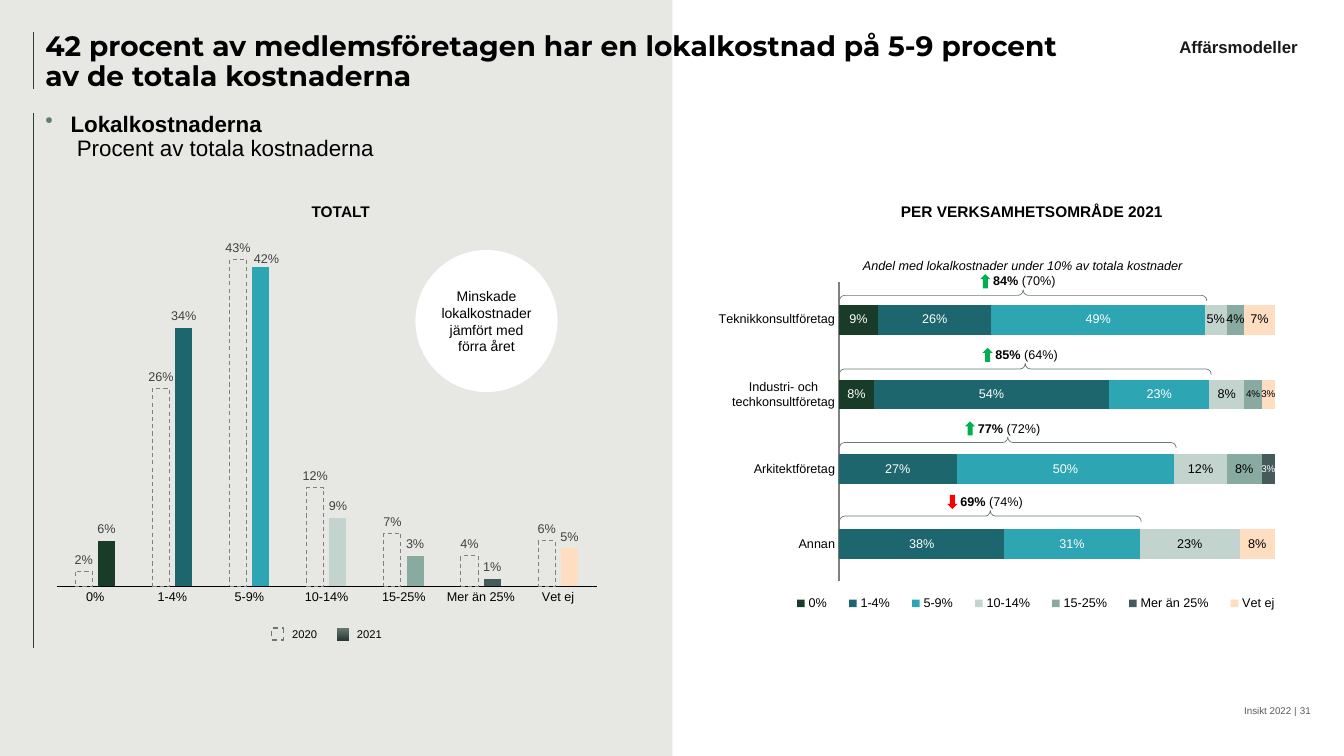
from dataclasses import dataclass

from lxml import etree
from pptx import Presentation
from pptx.chart.data import CategoryChartData
from pptx.dml.color import RGBColor
from pptx.enum.chart import XL_CHART_TYPE, XL_LABEL_POSITION, XL_LEGEND_POSITION, XL_TICK_LABEL_POSITION, XL_TICK_MARK
from pptx.enum.dml import MSO_LINE
from pptx.enum.shapes import MSO_CONNECTOR, MSO_SHAPE
from pptx.enum.text import MSO_ANCHOR, PP_ALIGN
from pptx.oxml import parse_xml
from pptx.oxml.ns import nsdecls, qn
from pptx.util import Inches, Pt

COLUMN, STACK = XL_CHART_TYPE.COLUMN_CLUSTERED, XL_CHART_TYPE.BAR_STACKED
ABOVE, MIDST = XL_LABEL_POSITION.OUTSIDE_END, XL_LABEL_POSITION.CENTER
BASE, NO_TICK, NEAR = XL_LEGEND_POSITION.BOTTOM, XL_TICK_MARK.NONE, XL_TICK_LABEL_POSITION.NEXT_TO_AXIS
DASH, STRAIGHT = MSO_LINE.DASH, MSO_CONNECTOR.STRAIGHT
RECT, OVAL, BRACE, ARROW = MSO_SHAPE.RECTANGLE, MSO_SHAPE.OVAL, MSO_SHAPE.RIGHT_BRACE, MSO_SHAPE.DOWN_ARROW
TOP, MIDDLE, BOTTOM = MSO_ANCHOR.TOP, MSO_ANCHOR.MIDDLE, MSO_ANCHOR.BOTTOM
LEFT, CENTER, RIGHT = PP_ALIGN.LEFT, PP_ALIGN.CENTER, PP_ALIGN.RIGHT


@dataclass(frozen=True)
class Theme:
    """Colours, fonts and type sizes of the slide."""
    back: str = "E7E8E4"
    white: str = "FFFFFF"
    black: str = "000000"
    rule: str = "323E39"
    sage: str = "657B71"
    pine: str = "2A3B36"
    grey: str = "808080"
    dim: str = "404040"
    foot: str = "595959"
    tag: str = "191919"
    rise: str = "00B050"
    fall: str = "FF0000"
    scale: tuple = ("193C29", "1D666E", "2EA5B3", "C3D4CF", "88AAA0", "455A5A", "FEDDC1")
    font: str = "Arial"
    head: str = "Montserrat"
    title: int = 20
    lead: int = 16
    chip: int = 12
    cap: int = 11
    body: int = 10
    small: int = 9
    key: int = 8
    tiny: int = 7


T = Theme()
SPANS = ("0%", "1-4%", "5-9%", "10-14%", "15-25%", "Mer än 25%", "Vet ej")
FIELDS = ("Teknikkonsultföretag", "Industri- och\ntechkonsultföretag", "Arkitektföretag", "Annan")
YEARS = (("Series 1", (0.02, 0.26, 0.43, 0.13, 0.07, 0.04, 0.06)),
         ("Series 2", (0.06, 0.34, 0.42, 0.09, 0.04, 0.01, 0.05)))
SHARES = ((0.09, 0.08, 0, 0), (0.26, 0.54, 0.27, 0.38), (0.49, 0.23, 0.5, 0.31), (0.05, 0.08, 0.12, 0.23),
          (0.04, 0.04, 0.08, 0), (0, 0, 0.04, 0), (0.07, 0.04, 0, 0.08))
TIGHT = {4: {1: "4%"}, 5: {2: "3%"}, 6: {1: "3%"}}
TRENDS = ((84, 70), (85, 64), (77, 72), (69, 74))
NOTE = "Andel med lokalkostnader under 10% av totala kostnader"


def rgb(code):
    """Turn a hex code into a colour."""
    return RGBColor.from_string(code)


def style(font, size, color=T.black, face=T.font):
    """Set the face, size and colour of a font."""
    font.name, font.size = face, Pt(size)
    font.color.rgb = rgb(color)


def write(frame, lines, size, color=T.black, face=T.font, align=LEFT, anchor=TOP, inset=(0.1, 0.05),
          wrap=True, space=1.0):
    """Fill a frame with lines, each a list of (text, marks) runs."""
    frame.word_wrap, frame.vertical_anchor = wrap, anchor
    frame.margin_left = frame.margin_right = Inches(inset[0])
    frame.margin_top = frame.margin_bottom = Inches(inset[1])
    for i, line in enumerate(lines):
        para = frame.add_paragraph() if i else frame.paragraphs[0]
        para.alignment, para.line_spacing = align, space
        for text, marks in line:
            run = para.add_run()
            run.text = text
            style(run.font, size, color, face)
            run.font.bold, run.font.italic = "b" in marks, "i" in marks


def label(slide, box, lines, size, **look):
    """Add a text box."""
    area = slide.shapes.add_textbox(*map(Inches, box))
    write(area.text_frame, lines, size, **look)
    return area


def shape(slide, kind, box, fill=None, line=None, width=0.5, turn=0):
    """Add a preset shape without a shadow."""
    item = slide.shapes.add_shape(kind, *map(Inches, box))
    item.shadow.inherit, item.rotation = False, turn
    for paint, color in ((item.fill, fill), (item.line.fill, line)):
        if color:
            paint.solid()
            paint.fore_color.rgb = rgb(color)
        else:
            paint.background()
    if line:
        item.line.width = Pt(width)
    return item


def rule(slide, top, end):
    """Add a thin upright line at the left margin."""
    line = slide.shapes.add_connector(STRAIGHT, Inches(0.33), Inches(top), Inches(0.33), Inches(end))
    line.line.color.rgb, line.line.width = rgb(T.rule), Pt(0.5)
    etree.SubElement(line._element.spPr, qn("a:effectLst"))


def bullet(area):
    """Give the first line a bullet and indent the rest to match."""
    for i, para in enumerate(area.text_frame.paragraphs):
        props = para._p.get_or_add_pPr()
        props.set("marL", str(Inches(0.25)))
        if not i:
            props.set("indent", str(Inches(-0.25)))
            props.append(parse_xml(f'<a:buClr {nsdecls("a")}><a:srgbClr val="{T.sage}"/></a:buClr>'))
            props.append(parse_xml(f'<a:buChar {nsdecls("a")} char="•"/>'))


def place(part, index, **spots):
    """Fix the layout of a chart part by hand."""
    for old in part.findall(qn("c:layout")):
        part.remove(old)
    tags = "".join(f'<c:{tag} val="{val}"/>' for tag, val in spots.items())
    part.insert(index, parse_xml(f'<c:layout {nsdecls("c")}><c:manualLayout>{tags}</c:manualLayout></c:layout>'))


def chart(slide, kind, box, names, rows, gap, lap, peak, edge, plot):
    """Add a chart with a hidden value axis and a fixed plot area."""
    data = CategoryChartData(number_format="0%")
    data.categories = names
    for name, vals in rows:
        data.add_series(name, vals)
    graph = slide.shapes.add_chart(kind, *map(Inches, box), data).chart
    style(graph.font, T.small)
    graph.has_title = graph.has_legend = False
    bars = graph.plots[0]
    bars.gap_width, bars.overlap, bars.vary_by_categories = gap, lap, False
    vals, cats = graph.value_axis, graph.category_axis
    vals.minimum_scale, vals.maximum_scale = 0, peak
    vals.has_major_gridlines = vals.visible = False
    vals.major_tick_mark = cats.major_tick_mark = NO_TICK
    cats.tick_label_position = NEAR
    cats.format.line.color.rgb, cats.format.line.width = rgb(edge), Pt(0.75)
    style(cats.tick_labels.font, T.small)
    place(graph._chartSpace.chart.plotArea, 0, layoutTarget="inner", xMode="edge", yMode="edge",
          **dict(zip("xywh", plot)))
    return graph


def values(row, spot, color, fixed, size=T.small):
    """Show the values of a series, with some labels set by hand."""
    marks = row.data_labels
    marks.show_value, marks.position = True, spot
    marks.number_format, marks.number_format_is_linked = "0%;;", False
    style(marks.font, T.small, color)
    for i, text in fixed.items():
        mark = row.points[i].data_label
        mark.text_frame.text = text
        style(mark.text_frame.paragraphs[0].runs[0].font, size, color)
        mark.position = spot


def paint(part, color):
    """Fill a series or a point."""
    part.format.fill.solid()
    part.format.fill.fore_color.rgb = rgb(color)


def totals(slide):
    """Draw the column chart of both years and its key."""
    graph = chart(slide, COLUMN, (0.45, 2.35, 5.58, 3.73), SPANS, YEARS, 219, -33, 0.45, T.black,
                  (0.02, 0.02, 0.96, 0.91))
    past, now = graph.plots[0].series
    past.format.fill.background()
    edge = past.format.line
    edge.color.rgb, edge.width, edge.dash_style = rgb(T.grey), Pt(0.75), DASH
    paint(now, T.pine)
    for i, color in enumerate(T.scale):
        paint(now.points[i], color)
    values(past, ABOVE, T.dim, {3: "12%"})
    values(now, ABOVE, T.dim, {2: "42%", 4: "3%"})
    place(now.data_labels._element.find(qn("c:dLbl")), 1, x=0.01, y=0.01)
    old = shape(slide, RECT, (2.69, 6.23, 0.12, 0.12), line=T.sage, width=1)
    old.line.dash_style = DASH
    new = shape(slide, RECT, (3.34, 6.23, 0.12, 0.12))
    new.fill.gradient()
    new.fill.gradient_angle = 270
    for stop, color in zip(new.fill.gradient_stops, (T.sage, T.pine)):
        stop.color.rgb = rgb(color)
    for left, year in ((2.8, "2020"), (3.44, "2021")):
        label(slide, (left, 6.17, 0.45, 0.24), [[(year, "")]], T.key, wrap=False)


def fields(slide):
    """Draw the stacked chart by field of work."""
    graph = chart(slide, STACK, (6.96, 2.62, 5.92, 3.62), FIELDS, zip(SPANS, SHARES), 150, 100, 1, T.grey,
                  (0.23, 0.05, 0.73, 0.82))
    graph.category_axis.reverse_order = True
    graph.has_legend = True
    graph.legend.position, graph.legend.include_in_layout = BASE, False
    style(graph.legend.font, T.small)
    place(graph.legend._element, 1, xMode="edge", yMode="edge", x=0.13, y=0.89, w=0.86, h=0.08)
    for i, row in enumerate(graph.plots[0].series):
        paint(row, T.scale[i])
        values(row, MIDST, T.white if i in (0, 1, 2, 5) else T.black, TIGHT.get(i, {}), T.tiny)


def trend(slide, i, now, past):
    """Add the brace, arrow and shares above one bar."""
    width, y = now * 4.34 / 100, 2.93 + 0.73 * i
    mid = 8.32 + width / 2
    brace = shape(slide, BRACE, (mid - 0.05, y - width / 2, 0.11, width), line=T.sage, turn=270)
    brace.adjustments[0], brace.adjustments[1] = 0.47, 0.5
    lines = [[(f" {now}% ", "b"), (f"({past}%)", "")]]
    wide, high = 0.86, 0.25
    if not i:
        lines.insert(0, [(NOTE, "i")])
        wide, high = 3.4, 0.4
    label(slide, (mid - wide / 2, y - 0.02 - high, wide, high), lines, T.small, align=CENTER, anchor=BOTTOM, wrap=False)
    up = now > past
    shape(slide, ARROW, (mid - 0.42, y - 0.21, 0.1, 0.14), T.rise if up else T.fall, turn=180 if up else 0)


def main():
    """Build the slide and save it."""
    deck = Presentation()
    deck.slide_width, deck.slide_height = Inches(13.33), Inches(7.5)
    slide = deck.slides.add_slide(deck.slide_layouts[6])
    slide.background.fill.solid()
    slide.background.fill.fore_color.rgb = rgb(T.back)
    rule(slide, 0.32, 0.88)
    rule(slide, 1.12, 6.43)
    shape(slide, RECT, (6.67, 0, 6.67, 7.5), T.white)
    title = "42 procent av medlemsföretagen har en lokalkostnad på 5-9 procent av de totala kostnaderna"
    label(slide, (0.45, 0.32, 10.33, 0.56), [[(title, "b")]], T.title, face=T.head, inset=(0, 0), space=0.9)
    bullet(label(slide, (0.45, 1.12, 12.55, 5.32),
                 [[("Lokalkostnaderna", "b")], [(" Procent av totala kostnaderna", "")]],
                 T.lead, inset=(0, 0), space=0.9))
    for box, text in (((8.36, 6.93, 4.5, 0.18), "Insikt 2022 |"), ((10, 6.93, 3, 0.18), "31")):
        label(slide, box, [[(text, "")]], T.tiny, color=T.foot, align=RIGHT, anchor=BOTTOM, inset=(0, 0))
    label(slide, (11.57, 0.32, 1.43, 0.3), [[("Affärsmodeller", "b")]], T.chip, color=T.tag, align=CENTER, wrap=False)
    for box, text in (((2.86, 1.96, 1.04, 0.29), "TOTALT"), ((8.8, 1.96, 2.87, 0.29), "PER VERKSAMHETSOMRÅDE 2021")):
        label(slide, box, [[(text, "b")]], T.cap, align=CENTER)
    totals(slide)
    disc = shape(slide, OVAL, (4.12, 2.48, 1.41, 1.41), T.white)
    write(disc.text_frame, [[("Minskade lokalkostnader jämfört med förra året", "")]], T.body,
          align=CENTER, anchor=MIDDLE, inset=(0, 0.05))
    fields(slide)
    for i, (now, past) in enumerate(TRENDS):
        trend(slide, i, now, past)
    deck.save("out.pptx")


if __name__ == "__main__":
    main()
